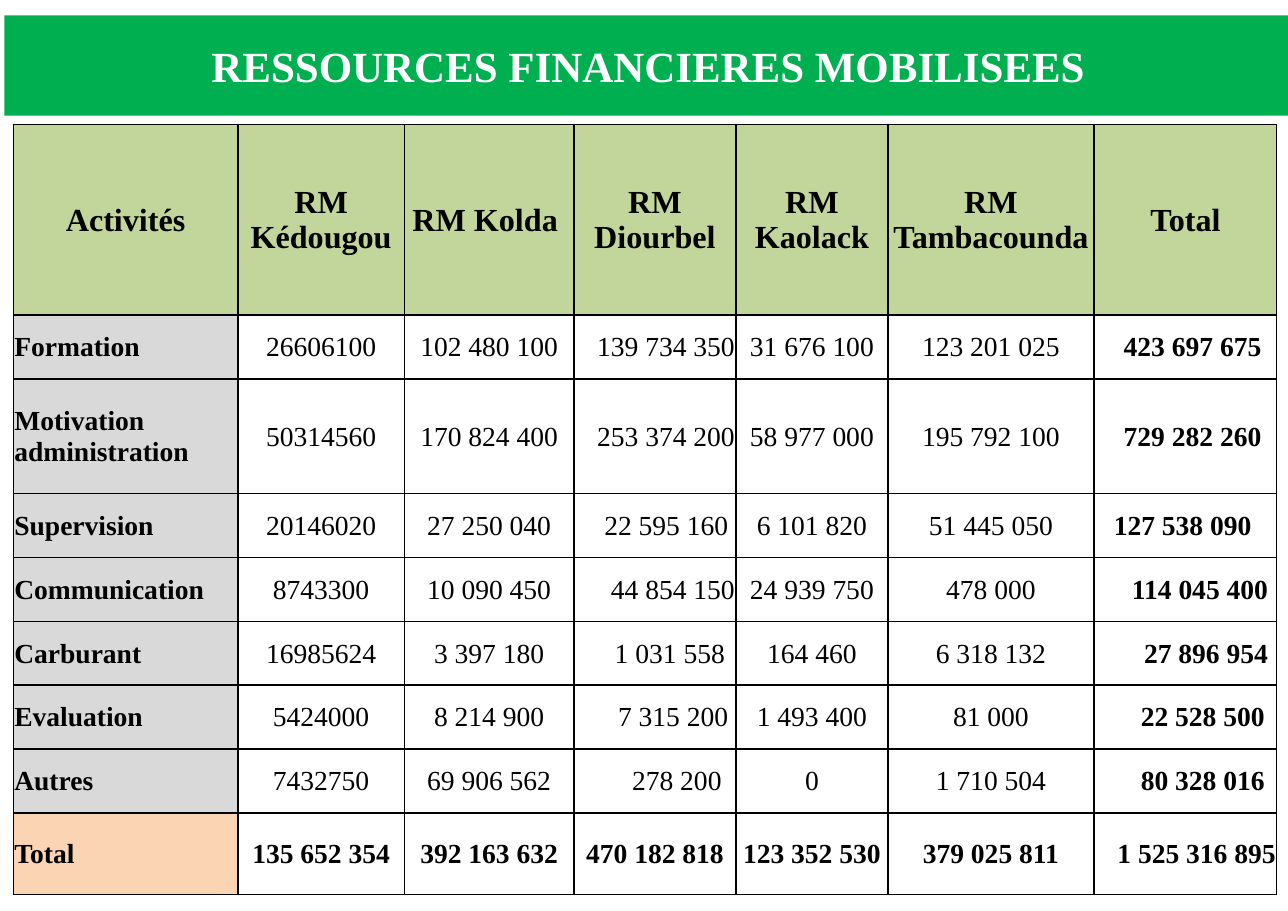
from lxml import etree
from pptx import Presentation
from pptx.dml.color import RGBColor
from pptx.enum.text import MSO_ANCHOR, PP_ALIGN
from pptx.oxml.ns import qn
from pptx.util import Inches, Pt

FONT = "Times New Roman"
BLACK = RGBColor(0x00, 0x00, 0x00)
WHITE = RGBColor(0xFF, 0xFF, 0xFF)
GREEN = RGBColor(0x00, 0xB0, 0x50)
HEADER_GREEN = RGBColor(0xC2, 0xD6, 0x9B)
GREY = RGBColor(0xD9, 0xD9, 0xD9)
PEACH = RGBColor(0xFB, 0xD4, 0xB4)

COL_WIDTHS = [2.04, 1.51, 1.54, 1.47, 1.38, 1.87, 1.66]
ROW_HEIGHTS = [1.73, 0.58, 1.04, 0.58, 0.58, 0.58, 0.58, 0.58, 0.74]
ROWS = [
    ["Activités", "RM Kédougou", "RM Kolda ", "RM Diourbel", "RM Kaolack", "RM Tambacounda", "Total"],
    ["Formation", "26606100", "102 480 100", "139 734 350", "31 676 100", "123 201 025", "423 697 675"],
    ["Motivation administration", "50314560", "170 824 400", "253 374 200", "58 977 000", "195 792 100",
     "729 282 260"],
    ["Supervision", "20146020", "27 250 040", "22 595 160", "6 101 820", "51 445 050", "127 538 090"],
    ["Communication", "8743300", "10 090 450", "44 854 150", "24 939 750", "478 000", "114 045 400"],
    ["Carburant", "16985624", "3 397 180", "1 031 558", "164 460", "6 318 132", "27 896 954"],
    ["Evaluation", "5424000", "8 214 900", "7 315 200", "1 493 400", "81 000", "22 528 500"],
    ["Autres", "7432750", "69 906 562", "278 200", "0", "1 710 504", "80 328 016"],
    ["Total", "135 652 354", "392 163 632", "470 182 818", "123 352 530", "379 025 811", "1 525 316 895"],
]
LAST_ROW, LAST_COL = len(ROWS) - 1, len(COL_WIDTHS) - 1
# Right margins of the right-aligned columns, one per row below the header
RIGHT_MARGINS = {
    3: [0.01, 0.01, 0.07, 0.01, 0.1, 0.07, 0.13, 0.11],
    LAST_COL: [0.14, 0.14, 0.23, 0.08, 0.08, 0.11, 0.11, 0.01],
}


def format_paragraph(p, size, bold, color, align):
    p.alignment = align
    p.font.name = FONT
    p.font.size = Pt(size)
    p.font.bold = bold
    p.font.color.rgb = color


def add_title(slide, title):
    sp = slide.shapes.title
    sp.left, sp.top, sp.width, sp.height = Inches(0.04), Inches(0.14), Inches(11.69), Inches(0.91)
    sp.fill.solid()
    sp.fill.fore_color.rgb = GREEN
    tf = sp.text_frame
    tf.text = title
    tf.vertical_anchor = MSO_ANCHOR.MIDDLE
    format_paragraph(tf.paragraphs[0], 28.1, True, WHITE, PP_ALIGN.CENTER)


def add_borders(cell):
    tc_pr = cell._tc.get_or_add_tcPr()
    for side in ("lnL", "lnR", "lnT", "lnB"):
        ln = etree.SubElement(tc_pr, qn(f"a:{side}"), w=str(Pt(1)))
        fill = etree.SubElement(ln, qn("a:solidFill"))
        etree.SubElement(fill, qn("a:srgbClr"), val=str(BLACK))


def cell_color(row, col):
    if row == 0:
        return HEADER_GREEN
    if col > 0:
        return WHITE
    return PEACH if row == LAST_ROW else GREY


def cell_layout(row, col):
    """Return the alignment and the right margin in inches."""
    if row > 0 and col in RIGHT_MARGINS:
        return PP_ALIGN.RIGHT, RIGHT_MARGINS[col][row - 1]
    if row > 0 and col == 0:
        return PP_ALIGN.LEFT, 0.01
    return PP_ALIGN.CENTER, 0.01


def fill_cell(cell, row, col):
    align, right = cell_layout(row, col)
    bold = row in (0, LAST_ROW) or col in (0, LAST_COL)
    cell.text = ROWS[row][col]
    cell.vertical_anchor = MSO_ANCHOR.MIDDLE
    cell.margin_left = cell.margin_top = Inches(0.01)
    cell.margin_right, cell.margin_bottom = Inches(right), 0
    format_paragraph(cell.text_frame.paragraphs[0], 21 if row == 0 else 18, bold, BLACK, align)
    add_borders(cell)
    cell.fill.solid()
    cell.fill.fore_color.rgb = cell_color(row, col)


def add_resource_table(slide):
    table = slide.shapes.add_table(
        len(ROWS), len(COL_WIDTHS), Inches(0.12), Inches(1.13),
        Inches(sum(COL_WIDTHS)), Inches(sum(ROW_HEIGHTS))).table
    table.first_row = table.horz_banding = False
    for column, width in zip(table.columns, COL_WIDTHS):
        column.width = Inches(width)
    for r, height in enumerate(ROW_HEIGHTS):
        table.rows[r].height = Inches(height)
        for c in range(len(COL_WIDTHS)):
            fill_cell(table.cell(r, c), r, c)


def main():
    prs = Presentation()
    prs.slide_width, prs.slide_height = Inches(11.69), Inches(8.27)
    slide = prs.slides.add_slide(prs.slide_layouts[5])
    add_title(slide, "RESSOURCES FINANCIERES MOBILISEES")
    add_resource_table(slide)
    prs.save("out.pptx")


if __name__ == "__main__":
    main()
